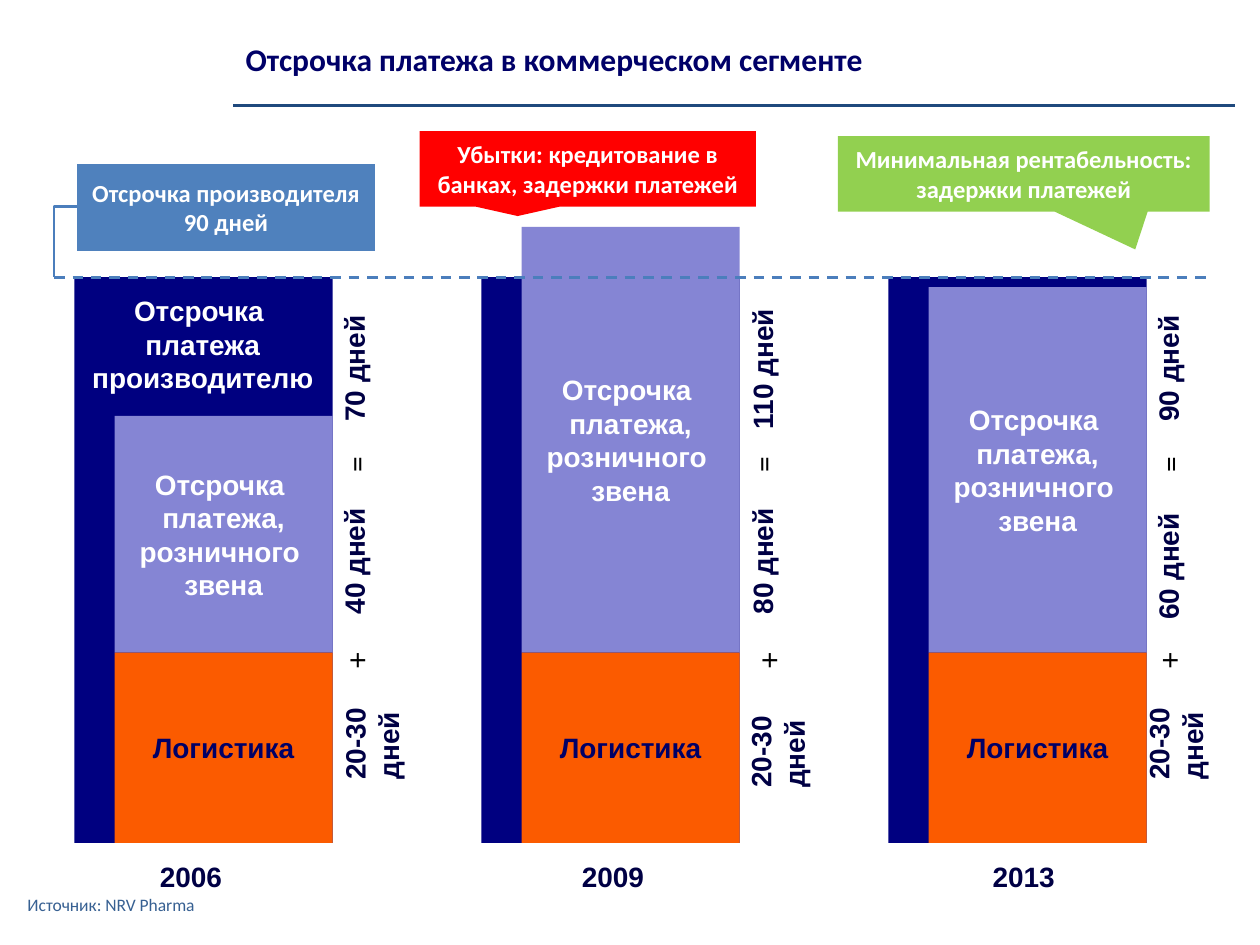
import pptx
import pptx.util
import pptx.dml.color
import pptx.enum.dml
import pptx.enum.shapes
import pptx.enum.text
import pptx.oxml.ns
from lxml import etree

Inches = pptx.util.Inches
Pt = pptx.util.Pt
RGBColor = pptx.dml.color.RGBColor
Shape = pptx.enum.shapes.MSO_SHAPE
Connector = pptx.enum.shapes.MSO_CONNECTOR
Align = pptx.enum.text.PP_ALIGN
Anchor = pptx.enum.text.MSO_ANCHOR
AutoSize = pptx.enum.text.MSO_AUTO_SIZE

WHITE = RGBColor(0xFF, 0xFF, 0xFF)
BLACK = RGBColor(0x00, 0x00, 0x00)
NAVY = RGBColor(0x00, 0x00, 0x80)
LILAC = RGBColor(0x85, 0x85, 0xD4)
ORANGE = RGBColor(0xFB, 0x5B, 0x00)
LOGISTICS_TEXT = RGBColor(0x00, 0x00, 0x66)
TITLE_TEXT = RGBColor(0x00, 0x00, 0x68)
LABEL_TEXT = RGBColor(0x00, 0x00, 0x44)
SOURCE_TEXT = RGBColor(0x37, 0x60, 0x92)
RULE = RGBColor(0x1F, 0x49, 0x7D)
GUIDE = RGBColor(0x4B, 0x7E, 0xBC)
BLUE = RGBColor(0x4F, 0x81, 0xBD)
RED = RGBColor(0xFF, 0x00, 0x00)
GREEN = RGBColor(0x92, 0xD0, 0x50)

COLUMN_LEFT, COLUMN_STEP, COLUMN_WIDTH = 0.59, 3.23, 2.05
COLUMN_TOP, COLUMN_BOTTOM = 2.2, 6.69
BLOCK_INSET, BLOCK_WIDTH = 0.32, 1.73
LOGISTICS_TOP = 5.18
RETAIL_LINES = ["Отсрочка ", "платежа,", "розничного ", "звена"]

# Labels: text, centre x from the column's left, centre y, width
COLUMNS = [
    {"year": "2006", "year_left": 1.17, "retail_top": 3.3,
     "days": [("70 дней", 2.22, 2.92, 1.05), ("40 дней", 2.22, 4.45, 1.05)],
     "logistics": (2.36, 1.05), "signs": [("=", 2.23), ("+", 2.23)]},
    {"year": "2009", "year_left": 4.52, "retail_top": 1.8,
     "days": [("110 дней", 2.23, 2.92, 1.17), ("80 дней", 2.23, 4.45, 1.05)],
     "logistics": (2.35, 1.18), "signs": [("=", 2.23), ("+", 2.27)]},
    {"year": "2013", "year_left": 7.78, "retail_top": 2.28,
     "days": [("90 дней", 2.22, 2.92, 1.05), ("60 дней", 2.22, 4.49, 1.05)],
     "logistics": (2.28, 1.05), "signs": [("=", 2.23), ("+", 2.22)]},
]


class SlideBuilder:
    def __init__(self, page):
        self.page = page

    def fill_text(self, frame, lines, size, color, font="Arial", bold=True,
                  align=Align.LEFT, anchor=Anchor.TOP, wrap=True):
        frame.word_wrap = wrap
        frame.vertical_anchor = anchor
        for index, line in enumerate(lines):
            para = frame.add_paragraph() if index else frame.paragraphs[0]
            para.text = line
            para.alignment = align
            para.font.name = font
            para.font.size = Pt(size)
            para.font.bold = bold
            para.font.color.rgb = color

    def title(self, text, left, top, width, height):
        box = self.page.shapes.title
        box.left, box.top = Inches(left), Inches(top)
        box.width, box.height = Inches(width), Inches(height)
        self.fill_text(box.text_frame, [text], 18, TITLE_TEXT, "Calibri")

    def text(self, lines, left, top, width, height, size=16,
             color=LABEL_TEXT, **style):
        box = self.page.shapes.add_textbox(
            Inches(left), Inches(top), Inches(width), Inches(height))
        self.fill_text(box.text_frame, lines, size, color, **style)
        box.text_frame.auto_size = AutoSize.SHAPE_TO_FIT_TEXT
        return box

    def upright(self, text, center_x, center_y, width, height, **style):
        """Add a label that reads from bottom to top around a centre."""
        box = self.text([text], center_x - width / 2, center_y - height / 2,
                        width, height, **style)
        box.rotation = 270

    def block(self, left, top, width, height, fill, kind=Shape.RECTANGLE):
        shape = self.page.shapes.add_shape(
            kind, Inches(left), Inches(top), Inches(width), Inches(height))
        shape.shadow.inherit = False
        shape.fill.solid()
        shape.fill.fore_color.rgb = fill
        shape.line.fill.background()
        return shape

    def text_block(self, lines, left, top, width, height, fill, color):
        shape = self.block(left, top, width, height, fill)
        self.fill_text(shape.text_frame, lines, 16, color, align=Align.CENTER,
                       anchor=Anchor.MIDDLE, wrap=False)

    def callout(self, text, left, top, width, height, fill, kind, tip=()):
        shape = self.block(left, top, width, height, fill, kind)
        for index, value in enumerate(tip):
            shape.adjustments[index] = value
        self.fill_text(shape.text_frame, [text], 14, WHITE, "Calibri",
                       align=Align.CENTER, anchor=Anchor.MIDDLE)

    def line(self, start, end, color, kind=Connector.STRAIGHT, dashed=False):
        line = self.page.shapes.add_connector(
            kind, *(Inches(value) for value in (*start, *end)))
        line.line.color.rgb = color
        line.line.width = Pt(1.5)
        if dashed:
            line.line.dash_style = pptx.enum.dml.MSO_LINE.DASH
        properties = line._element.spPr
        etree.SubElement(properties, pptx.oxml.ns.qn("a:effectLst"))
        if kind == Connector.ELBOW:
            geometry = properties.find(pptx.oxml.ns.qn("a:prstGeom"))
            geometry.set("prst", "bentConnector2")

    def column(self, left, data):
        """Add one year's stack with its upright sum and year."""
        self.block(left, COLUMN_TOP, COLUMN_WIDTH,
                   COLUMN_BOTTOM - COLUMN_TOP, NAVY)
        inner = left + BLOCK_INSET
        retail_top = data["retail_top"]
        self.text_block(RETAIL_LINES, inner, retail_top, BLOCK_WIDTH,
                        LOGISTICS_TOP - retail_top, LILAC, WHITE)
        self.text_block(["Логистика"], inner, LOGISTICS_TOP, BLOCK_WIDTH,
                        COLUMN_BOTTOM - LOGISTICS_TOP, ORANGE, LOGISTICS_TEXT)
        for text, offset, center_y, width in data["days"]:
            self.upright(text, left + offset, center_y, width, 0.37,
                         wrap=False)
        offset, width = data["logistics"]
        self.upright("20-30 дней", left + offset, 5.76, width, 0.64)
        for (sign, offset), center_y in zip(data["signs"], (3.68, 5.24)):
            self.upright(sign, left + offset, center_y, 0.33, 0.4, size=18,
                         color=BLACK, font="Calibri", bold=False, wrap=False)
        self.text([data["year"]], data["year_left"], 6.77, 0.7, 0.37,
                  wrap=False)


def main():
    deck = pptx.Presentation()
    deck.slide_width, deck.slide_height = Inches(10), Inches(7.5)
    builder = SlideBuilder(deck.slides.add_slide(deck.slide_layouts[5]))

    builder.title("Отсрочка платежа в коммерческом сегменте",
                  1.85, 0.27, 7.17, 0.4)
    builder.line((1.85, 0.84), (9.8, 0.84), RULE)
    for index, data in enumerate(COLUMNS):
        builder.column(COLUMN_LEFT + index * COLUMN_STEP, data)
    builder.text(["Отсрочка ", "платежа производителю"], 0.43, 2.28, 2.36,
                 0.91, color=WHITE, align=Align.CENTER)

    builder.line((0.43, COLUMN_TOP), (9.63, COLUMN_TOP), GUIDE, dashed=True)
    builder.callout("Отсрочка производителя 90 дней", 0.61, 1.3, 2.37, 0.69,
                    BLUE, Shape.LINE_CALLOUT_3_BORDER_AND_ACCENT_BAR)
    builder.line((0.61, 1.64), (0.43, COLUMN_TOP), GUIDE, Connector.ELBOW)
    builder.callout("Убытки: кредитование в банках, задержки платежей",
                    3.33, 1.04, 2.67, 0.6, RED, Shape.RECTANGULAR_CALLOUT)
    builder.callout("Минимальная рентабельность: задержки платежей",
                    6.65, 1.08, 2.95, 0.6, GREEN, Shape.RECTANGULAR_CALLOUT,
                    tip=(0.3, 1))
    builder.text(["Источник: NRV Pharma"], 0.12, 6.98, 3.17, 0.4, size=10,
                 color=SOURCE_TEXT, font="Calibri", bold=False,
                 anchor=Anchor.MIDDLE).text_frame.auto_size = AutoSize.NONE
    deck.save("out.pptx")


if __name__ == "__main__":
    main()
